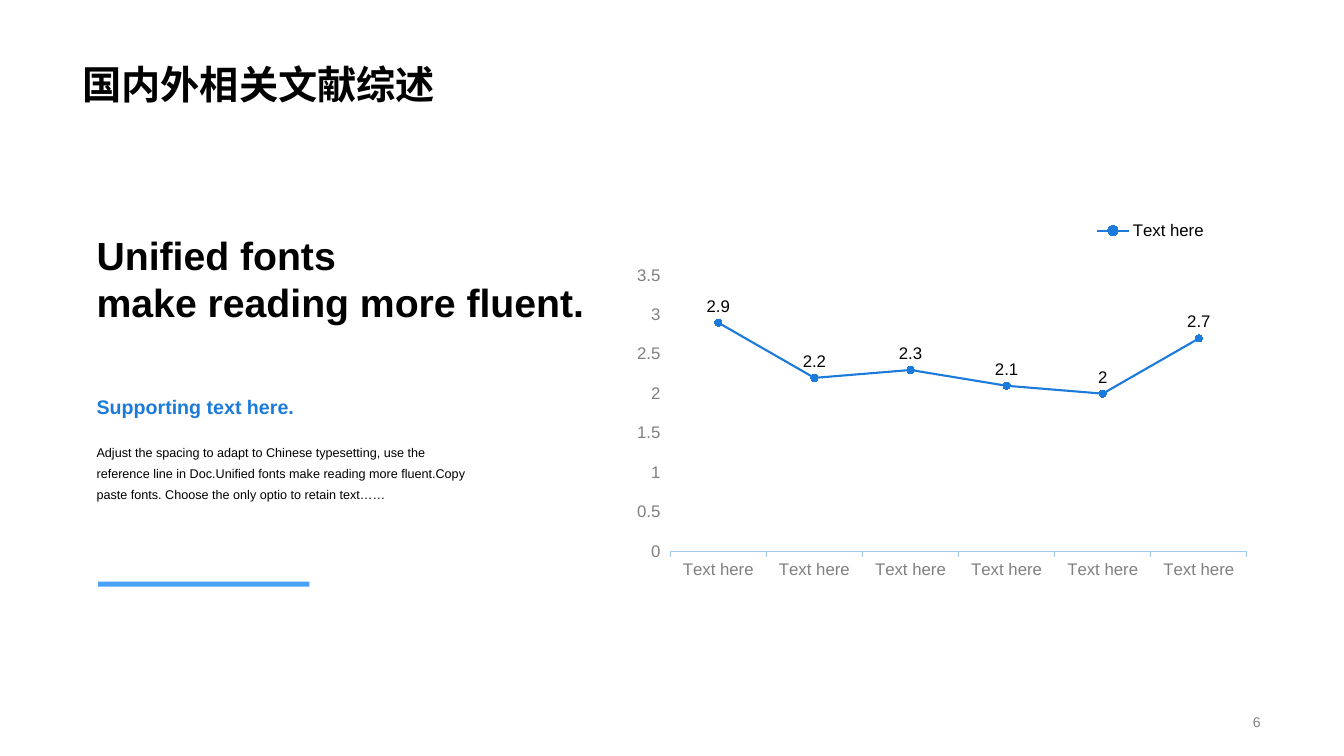
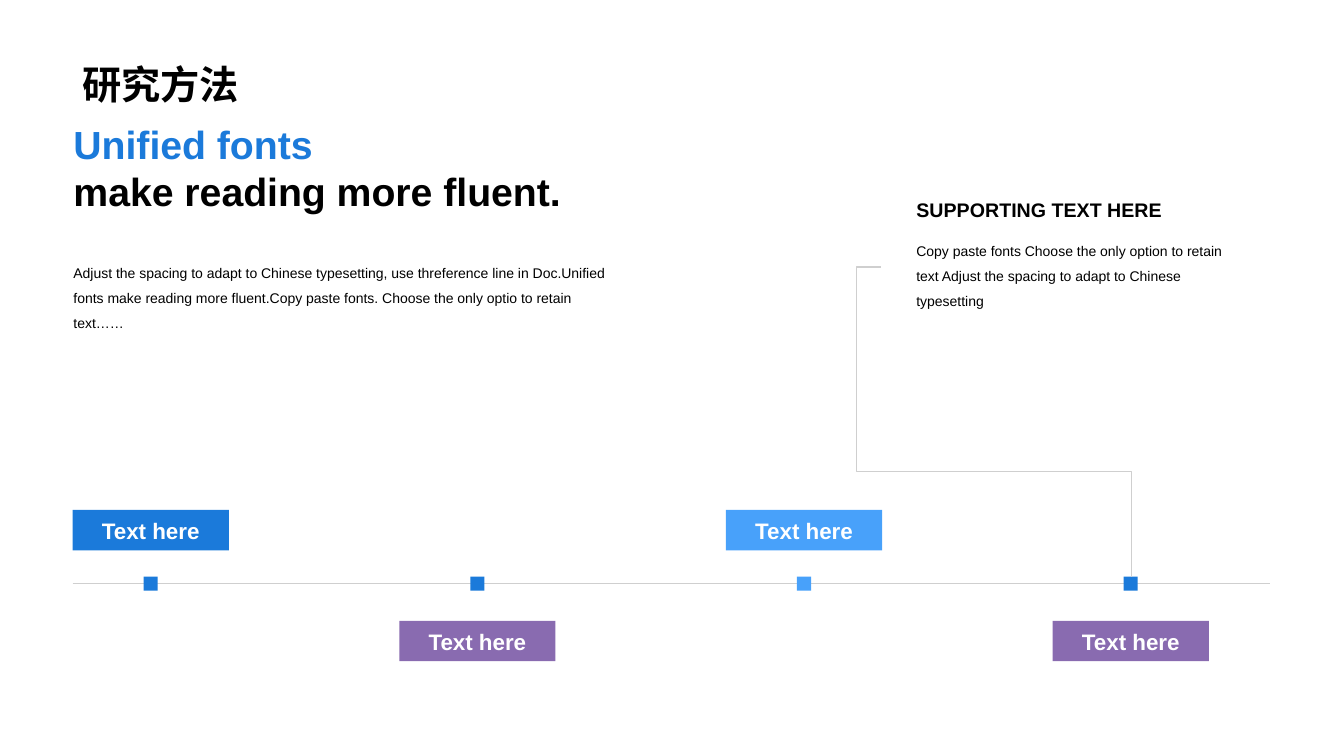
from lxml import etree
from pptx import Presentation, util as u
from pptx.chart import data as cd
from pptx.dml import color as dc
from pptx.enum import chart as ch, shapes as sh, text as tx
from pptx.oxml import ns

I = u.Inches
FONT = "Arial"
BLUE, SKY, PLUM = "1B7ADA", "48A1FA", "896BB0"
BLACK, WHITE, GRAY, RULE, AXIS = "000000", "FFFFFF", "808080", "CFCFCF", "A4CAF0"
LEFT, RIGHT = tx.PP_ALIGN.LEFT, tx.PP_ALIGN.RIGHT
MID, LOW = tx.MSO_ANCHOR.MIDDLE, tx.MSO_ANCHOR.BOTTOM
SLOGAN = ("Unified fonts", "make reading more fluent.")


def rgb(code):
    return dc.RGBColor.from_string(code)


def apply(item, values):
    for key, value in values.items():
        setattr(item, key, value)


def place(parent, spot, box):
    """Give a chart part a fixed place, as fractions of the chart."""
    for old in parent.findall(ns.qn("c:layout")):
        parent.remove(old)
    layout = etree.Element(ns.qn("c:layout"))
    manual = etree.SubElement(layout, ns.qn("c:manualLayout"))
    marks = [("xMode", "edge"), ("yMode", "edge"), *zip("xywh", box)]
    if parent.tag == ns.qn("c:plotArea"):
        marks.insert(0, ("layoutTarget", "inner"))
    for tag, value in marks:
        etree.SubElement(manual, ns.qn("c:" + tag)).set("val", str(value))
    parent.insert(spot, layout)


class Deck:
    def __init__(self):
        self.prs = Presentation()
        apply(self.prs, {"slide_width": I(13.33), "slide_height": I(7.5)})
        self.slide = None

    def page(self, title):
        self.slide = self.prs.slides.add_slide(self.prs.slide_layouts[6])
        self.text((0.72, 0, 11.88, 1.12), [title], 28, bold=True,
                  space=0.9, anchor=LOW)

    def style(self, font, size, color, bold=False):
        apply(font, {"name": FONT, "size": u.Pt(size), "bold": bold})
        font.color.rgb = rgb(color)

    def text(self, box, lines, size, colors=(BLACK,), bold=False,
             space=None, anchor=tx.MSO_ANCHOR.TOP, align=LEFT):
        frame = self.slide.shapes.add_textbox(*map(I, box)).text_frame
        apply(frame, {"word_wrap": True, "vertical_anchor": anchor})
        for n, line in enumerate(lines):
            para = frame.add_paragraph() if n else frame.paragraphs[0]
            apply(para, {"alignment": align, "line_spacing": space})
            run = para.add_run()
            run.text = line
            self.style(run.font, size, colors[n % len(colors)], bold)

    def rect(self, box, fill, label=None):
        shape = self.slide.shapes.add_shape(sh.MSO_SHAPE.RECTANGLE, *map(I, box))
        shape.shadow.inherit = False
        shape.fill.solid()
        shape.fill.fore_color.rgb = rgb(fill)
        shape.line.fill.background()
        if label:
            frame = shape.text_frame
            frame.vertical_anchor = MID
            para = frame.paragraphs[0]
            para.alignment = tx.PP_ALIGN.CENTER
            run = para.add_run()
            run.text = label
            self.style(run.font, 16, WHITE, True)

    def line(self, start, end, kind=sh.MSO_CONNECTOR.STRAIGHT):
        link = self.slide.shapes.add_connector(kind, *map(I, start + end))
        link.line.width = u.Pt(1)
        link.line.color.rgb = rgb(RULE)
        etree.SubElement(link._element.spPr, ns.qn("a:effectLst"))
        return link

    def bend(self, start, end, bends):
        """Elbow that leaves upwards from start and enters end from the left."""
        (x1, y1), (x2, y2) = start, end
        wide, high = y1 - y2, x1 - x2
        left, top = (x1 + x2 - wide) / 2, (y1 + y2 - high) / 2
        link = self.line((left, top), (left + wide, top + high),
                         sh.MSO_CONNECTOR.ELBOW)
        props = link._element.spPr
        frame = props.find(ns.qn("a:xfrm"))
        frame.set("rot", str(270 * 60000))
        frame.set("flipV", "1")
        geom = props.find(ns.qn("a:prstGeom"))
        geom.set("prst", "bentConnector4")
        for old in list(geom):
            geom.remove(old)
        guides = etree.SubElement(geom, ns.qn("a:avLst"))
        for n, part in enumerate(bends, 1):
            guide = etree.SubElement(guides, ns.qn("a:gd"))
            guide.set("name", f"adj{n}")
            guide.set("fmla", f"val {round(part * 100000)}")

    def chart(self, box, cats, name, values):
        data = cd.CategoryChartData()
        data.categories = cats
        data.add_series(name, values)
        chart = self.slide.shapes.add_chart(
            ch.XL_CHART_TYPE.LINE_MARKERS, *map(I, box), data).chart
        apply(chart, {"has_title": False, "has_legend": True})
        self.style(chart.font, 10, BLACK)

        # Legend and plot area
        apply(chart.legend, {"position": ch.XL_LEGEND_POSITION.BOTTOM,
                             "include_in_layout": False})
        self.style(chart.legend.font, 12, BLACK)
        place(chart.legend._element, 1, (0.73, 0.06, 0.2, 0.08))
        area = chart._chartSpace.chart.plotArea
        place(area, 0, (0.058, 0.205, 0.927, 0.65))

        # Axes
        for axis in (chart.category_axis, chart.value_axis):
            apply(axis, {"has_major_gridlines": False,
                         "major_tick_mark": ch.XL_TICK_MARK.OUTSIDE})
            self.style(axis.tick_labels.font, 12, GRAY)
        edge = chart.category_axis.format.line
        edge.width = u.Pt(0.75)
        edge.color.rgb = rgb(AXIS)
        apply(chart.value_axis, {"minimum_scale": 0, "maximum_scale": 3.5,
                                 "major_unit": 0.5})
        chart.value_axis.format.line.fill.background()

        # Series
        plot = chart.plots[0]
        plot.vary_by_categories = False
        row = plot.series[0]
        row.smooth = False
        row.format.line.width = u.Pt(1.5)
        row.format.line.color.rgb = rgb(BLUE)
        apply(row.marker, {"style": ch.XL_MARKER_STYLE.CIRCLE, "size": 5})
        row.marker.format.fill.solid()
        row.marker.format.fill.fore_color.rgb = rgb(BLUE)
        row.marker.format.line.color.rgb = rgb(BLUE)
        apply(row.data_labels, {"show_value": True,
                                "position": ch.XL_LABEL_POSITION.ABOVE})
        self.style(row.data_labels.font, 12, BLACK)


def review(deck):
    deck.page("国内外相关文献综述")
    deck.text((9.69, 7.04, 2.91, 0.24), ["6"], 10, [GRAY],
              anchor=MID, align=RIGHT)
    deck.text((0.86, 2.25, 5.11, 1.04), SLOGAN, 28, bold=True)
    deck.text((0.86, 3.87, 3.09, 0.34), ["Supporting text here."], 14,
              [BLUE], bold=True)
    deck.text((0.86, 4.31, 3.87, 0.73), [
        "Adjust the spacing to adapt to Chinese typesetting, use the "
        "reference line in Doc.Unified fonts make reading more fluent."
        "Copy paste fonts. Choose the only optio to retain text……"],
        9, space=u.Pt(15))
    deck.rect((0.97, 5.77, 2.1, 0.05), SKY)
    deck.chart((6.29, 1.87, 6.17, 4.21), ["Text here"] * 6, "Text here",
               (2.9, 2.2, 2.3, 2.1, 2, 2.7))


def method(deck):
    deck.page("研究方法")

    # Introduction and side note
    deck.text((0.63, 1.14, 5.11, 1.04), SLOGAN, 28, (BLUE, BLACK), bold=True)
    deck.text((0.63, 2.49, 5.62, 0.86), [
        "Adjust the spacing to adapt to Chinese typesetting, use "
        "threference line in Doc.Unified fonts make reading more fluent."
        "Copy paste fonts. Choose the only optio to retain text……"],
        10, space=1.5)
    deck.text((8.99, 1.8, 3.21, 0.41), ["SUPPORTING TEXT HERE"], 14,
              bold=True, space=1.5)
    deck.text((8.99, 2.27, 3.46, 0.86), [
        "Copy paste fonts Choose the only option to retain text "
        "Adjust the spacing to adapt to Chinese typesetting"], 10, space=1.5)

    # Timeline: tags alternate above and below the line
    axis, left, pitch, wide, dot = 5.79, 0.72, 3.24, 1.55, 0.14
    deck.line((left, axis), (12.6, axis))
    steps = ((BLUE, BLUE), (PLUM, BLUE), (SKY, SKY), (PLUM, BLUE))
    for n, (tag, mark) in enumerate(steps):
        x = left + n * pitch
        deck.rect((x, (5.06, 6.16)[n % 2], wide, 0.4), tag, "Text here")
        deck.rect((x + (wide - dot) / 2, axis - dot / 2, dot, dot), mark)
    deck.bend((11.22, axis - dot / 2), (8.74, 2.65), (0.34, 1.1))


def main():
    deck = Deck()
    review(deck)
    method(deck)
    deck.prs.save("out.pptx")


if __name__ == "__main__":
    main()
